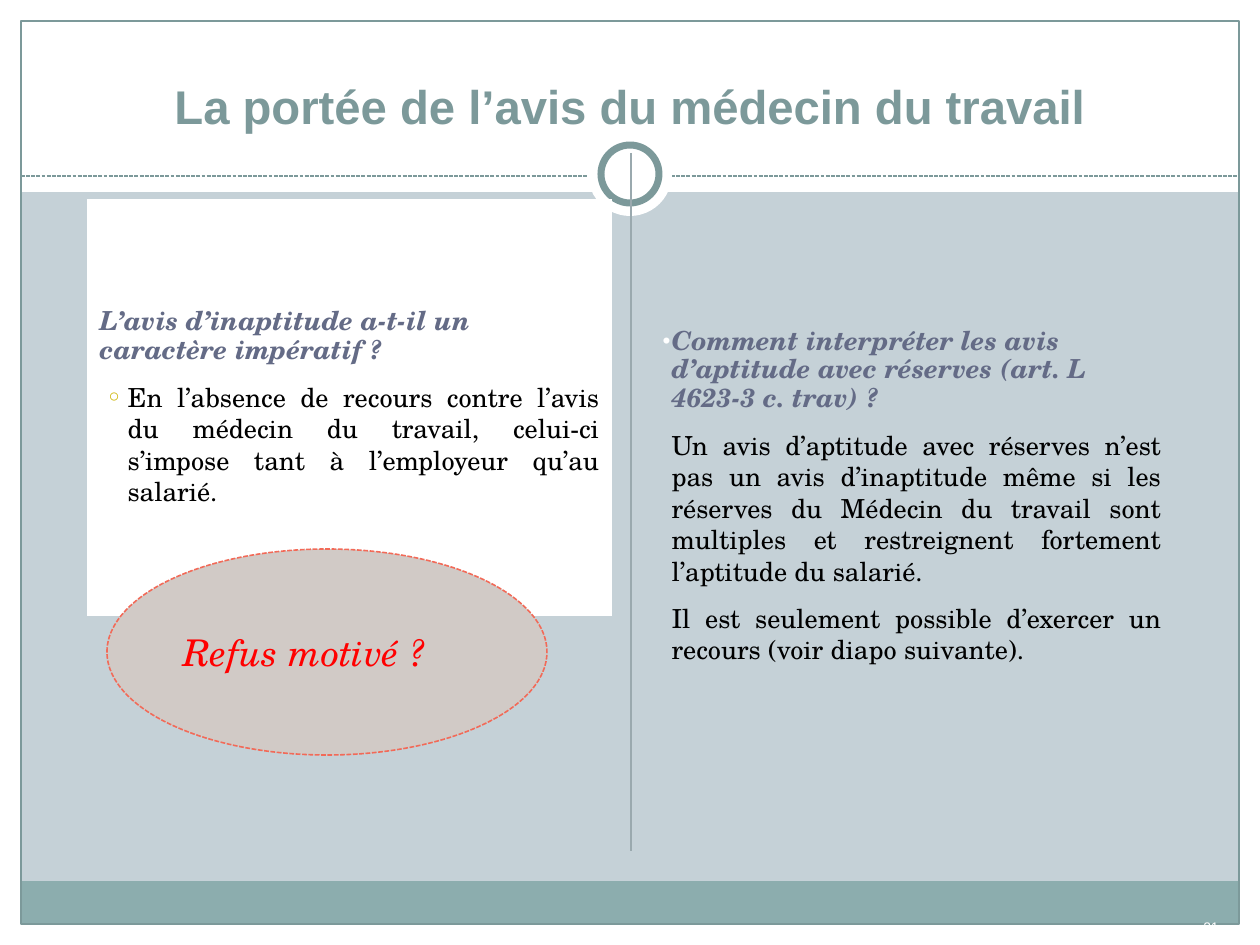
from lxml.etree import SubElement
from pptx import Presentation
from pptx.dml.color import RGBColor
from pptx.enum.dml import MSO_LINE
from pptx.enum.shapes import MSO_CONNECTOR, MSO_SHAPE
from pptx.enum.text import MSO_ANCHOR, MSO_AUTO_SIZE, PP_ALIGN
from pptx.oxml.ns import qn
from pptx.util import Pt

PX = 914400 / 126
W, H, EDGE = 1260, 945, 21
SERIF, SANS = "TeX Gyre Schola", "Arial"
C = {
    "bg": "C5D1D7", "white": "FFFFFF", "teal": "7C999A", "band": "8CADAE",
    "divider": "9AA9AE", "heading": "646B86", "black": "000000", "gold": "CCB400",
    "oval": "D1CAC6", "coral": "F26A58", "red": "FF0000",
}


def px(*values):
    return [round(v * PX) for v in values]


def rgb(name):
    return RGBColor.from_string(C[name])


def set_line(line, color, width, dash=None):
    line.color.rgb = rgb(color)
    line.width = Pt(width)
    if dash:
        line.dash_style = dash


def add_box(s, kind, box, fill=None, line=None, width=0.75, dash=None):
    sp = s.shapes.add_shape(kind, *px(*box))
    sp.shadow.inherit = False
    if fill:
        sp.fill.solid()
        sp.fill.fore_color.rgb = rgb(fill)
    else:
        sp.fill.background()
    if line:
        set_line(sp.line, line, width, dash)
    else:
        sp.line.fill.background()
    return sp


def add_rule(s, ends, color, dash=None):
    ln = s.shapes.add_connector(MSO_CONNECTOR.STRAIGHT, *px(*ends))
    set_line(ln.line, color, 0.75, dash)
    SubElement(ln._element.spPr, qn("a:effectLst"))


def place(sp, box):
    sp.left, sp.top, sp.width, sp.height = px(*box)
    sp._element.getparent().append(sp._element)


def setup_frame(sp, anchor=MSO_ANCHOR.MIDDLE):
    tf = sp.text_frame
    tf.word_wrap = True
    tf.auto_size = MSO_AUTO_SIZE.NONE
    tf.vertical_anchor = anchor
    return tf


def set_bullet(p, char, color, size):
    pPr = p._p.get_or_add_pPr()
    if not char:
        SubElement(pPr, qn("a:buNone"))
        return
    clr = SubElement(pPr, qn("a:buClr"))
    SubElement(clr, qn("a:srgbClr"), val=C[color])
    SubElement(pPr, qn("a:buSzPct"), val=str(size * 1000))
    SubElement(pPr, qn("a:buFont"), typeface=SANS)
    SubElement(pPr, qn("a:buChar"), char=char)


def add_text(tf, text, size=15, font=SERIF, color="black", bold=False, italic=False,
             align=PP_ALIGN.LEFT, level=0, before=0, spacing=1.0, margin=0, indent=0,
             bullet=None, bullet_color=None, bullet_size=100):
    p = tf.add_paragraph() if tf.text else tf.paragraphs[0]
    p.alignment, p.level = align, level
    p.space_before, p.space_after = Pt(before), Pt(0)
    p.line_spacing = spacing
    pPr = p._p.get_or_add_pPr()
    for name, value in zip(("marL", "indent"), px(margin, indent)):
        pPr.set(name, str(value))
    set_bullet(p, bullet, bullet_color, bullet_size)
    r = p.add_run()
    r.text = text
    r.font.name, r.font.size = font, Pt(size)
    r.font.bold, r.font.italic = bold, italic
    r.font.color.rgb = rgb(color)


def add_heading(tf, text, **fmt):
    add_text(tf, text, color="heading", bold=True, italic=True, before=18, spacing=0.9, **fmt)


def add_point(tf, text, **fmt):
    add_text(tf, text, align=PP_ALIGN.JUSTIFY, level=1, before=9, **fmt)


def draw_frame(s):
    rect, oval = MSO_SHAPE.RECTANGLE, MSO_SHAPE.OVAL
    for box in ((0, H - EDGE, W, EDGE), (0, 0, W, 192),
                (0, 0, EDGE, H), (W - EDGE, 0, EDGE, H)):
        add_box(s, rect, box, "white")
    add_box(s, rect, (EDGE, 881, W - 2 * EDGE, 43), "band")
    add_box(s, rect, (EDGE, EDGE, W - 2 * EDGE, H - 2 * EDGE), line="teal")
    add_rule(s, (EDGE, 176, W - EDGE, 176), "teal", MSO_LINE.SQUARE_DOT)
    add_box(s, oval, (588, 132, 84, 84), "white")
    add_box(s, oval, (601, 145, 58, 58), "white", "teal", 4)
    add_rule(s, (631, 153, 631, 851), "divider")


def fill_title(title):
    place(title, (87, 40, 1086, 100))
    add_text(setup_frame(title, MSO_ANCHOR.BOTTOM), "La portée de l’avis du médecin du travail",
             size=27, font=SANS, color="teal", bold=True, align=PP_ALIGN.CENTER)


def fill_left(body):
    place(body, (87, 199, 525, 417))
    body.fill.solid()
    body.fill.fore_color.rgb = rgb("white")
    tf = setup_frame(body)
    add_heading(tf, "L’avis d’inaptitude a-t-il un caractère impératif ?")
    add_point(tf, "En l’absence de recours contre l’avis du médecin du travail, celui-ci "
              "s’impose tant à l’employeur qu’au salarié.",
              margin=28, indent=-19, bullet="○", bullet_color="gold", bullet_size=70)


def fill_right(body):
    place(body, (650, 153, 524, 687))
    tf = setup_frame(body)
    add_heading(tf, "Comment interpréter les avis d’aptitude avec réserves (art. L 4623-3 c. trav) ?",
                margin=9, indent=-9, bullet="•", bullet_color="white", bullet_size=85)
    for text in ("Un avis d’aptitude avec réserves n’est pas un avis d’inaptitude même si les "
                 "réserves du Médecin du travail sont multiples et restreignent fortement "
                 "l’aptitude du salarié.",
                 "Il est seulement possible d’exercer un recours (voir diapo suivante)."):
        add_point(tf, text, margin=9)


def add_number(s):
    tf = setup_frame(s.shapes.add_textbox(*px(1173, 908, 76, 37)))
    tf.margin_left, tf.margin_top, tf.margin_right, tf.margin_bottom = px(6, 6, 6, 6)
    add_text(tf, "21", size=7.9, font=SANS, color="white", align=PP_ALIGN.CENTER)


def add_oval(s):
    sp = add_box(s, MSO_SHAPE.OVAL, (107, 549, 440, 206), "oval", "coral", 0.9,
                 MSO_LINE.SQUARE_DOT)
    add_text(setup_frame(sp), "Refus motivé ?", size=21, color="red", italic=True)


def main():
    prs = Presentation()
    prs.slide_width, prs.slide_height = px(W, H)
    s = prs.slides.add_slide(prs.slide_layouts[3])
    s.background.fill.solid()
    s.background.fill.fore_color.rgb = rgb("bg")
    title, left, right = s.placeholders
    draw_frame(s)
    fill_title(title)
    fill_left(left)
    add_number(s)
    fill_right(right)
    add_oval(s)
    prs.save("out.pptx")


if __name__ == "__main__":
    main()
